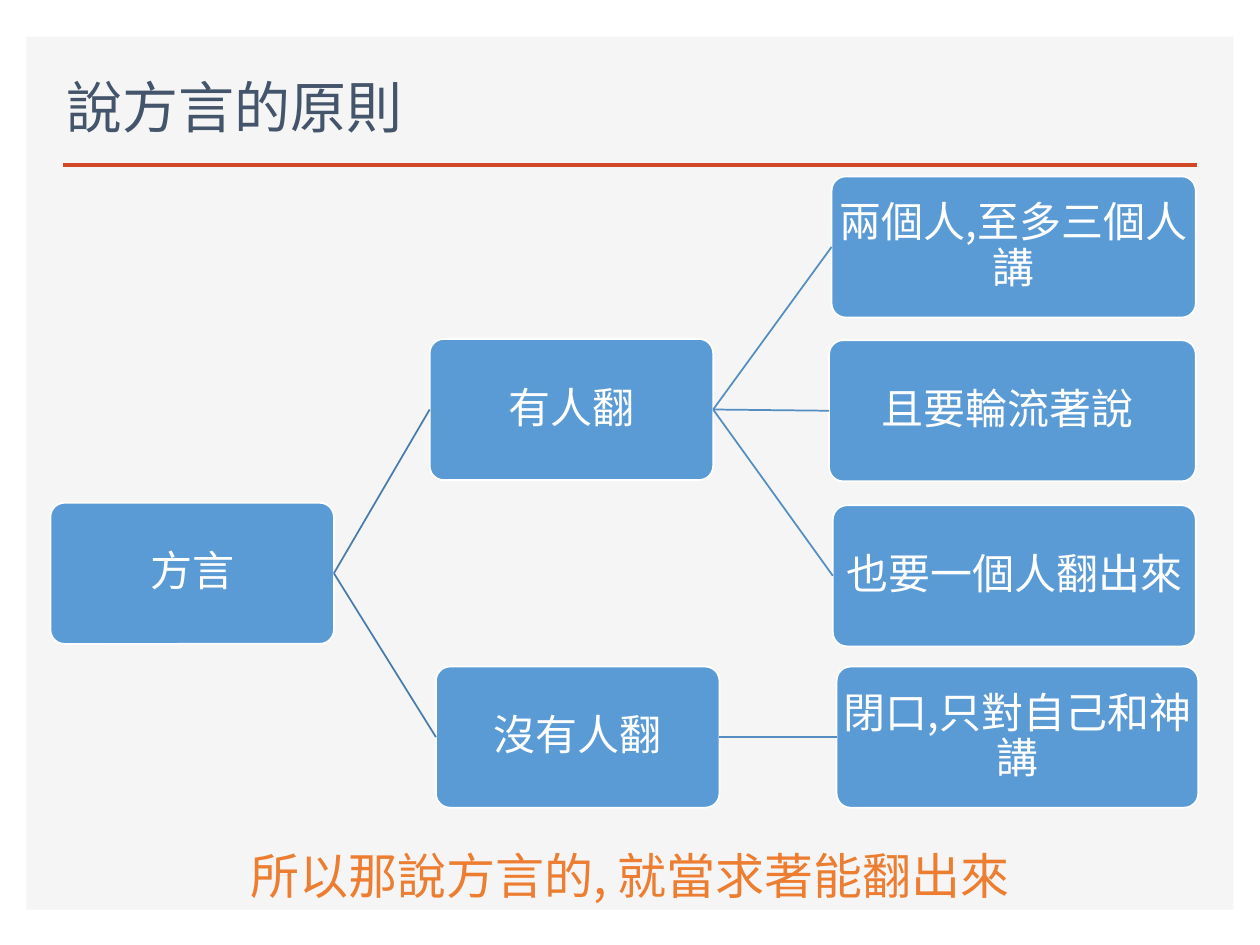
from lxml import etree
from pptx import Presentation
from pptx.dml.color import RGBColor
from pptx.enum.shapes import MSO_CONNECTOR, MSO_SHAPE
from pptx.enum.text import MSO_ANCHOR, PP_ALIGN
from pptx.oxml.ns import qn
from pptx.util import Inches, Pt

RECT, ROUNDED = MSO_SHAPE.RECTANGLE, MSO_SHAPE.ROUNDED_RECTANGLE
STRAIGHT = MSO_CONNECTOR.STRAIGHT
MIDDLE = MSO_ANCHOR.MIDDLE
LEFT, CENTER = PP_ALIGN.LEFT, PP_ALIGN.CENTER

FONT = "Noto Sans CJK SC"
WHITE = RGBColor(0xFF, 0xFF, 0xFF)
PANEL = RGBColor(0xF5, 0xF5, 0xF5)
RED = RGBColor(0xD2, 0x47, 0x26)
SLATE = RGBColor(0x44, 0x54, 0x6A)
BLUE = RGBColor(0x5B, 0x9B, 0xD5)
ORANGE = RGBColor(0xED, 0x7D, 0x31)
# Link colour for each level of the tree
LINK_COLORS = [RGBColor(0x49, 0x7C, 0xAB), RGBColor(0x53, 0x8D, 0xC1)]

NODE_HEIGHT = 1.12
LEFT_SITE, RIGHT_SITE = 1, 3

# (text, left, top, width, children), in inches
TREE = ("方言", 0.4, 3.99, 2.25, [
    ("有人翻", 3.41, 2.69, 2.25, [
        ("兩個人,至多三個人講", 6.6, 1.4, 2.89, []),
        ("且要輪流著說 ", 6.58, 2.7, 2.91, []),
        ("也要一個人翻出來", 6.61, 4.01, 2.88, []),
    ]),
    ("沒有人翻", 3.46, 5.29, 2.25, [
        ("閉口,只對自己和神講", 6.64, 5.29, 2.87, []),
    ]),
])


def write(tf, text, size, color, align):
    tf.word_wrap = True
    p = tf.paragraphs[0]
    p.alignment = align
    r = p.add_run()
    r.text = text
    r.font.size = Pt(size)
    r.font.name = FONT
    r.font.color.rgb = color
    etree.SubElement(r.font._element, qn("a:ea")).set("typeface", FONT)
    return p


def style_line(connector, color, width):
    connector.line.color.rgb = color
    connector.line.width = Pt(width)
    etree.SubElement(connector._element.spPr, qn("a:effectLst"))


def add_backdrop(slide, left, top, width, height):
    """Grey panel with the red rule below the title."""
    panel = slide.shapes.add_shape(RECT, left, top, width, height)
    panel.shadow.inherit = False
    panel.fill.solid()
    panel.fill.fore_color.rgb = PANEL
    panel.line.fill.background()
    margin, rule_y = Inches(0.29), top + Inches(1.02)
    rule = slide.shapes.add_connector(
        STRAIGHT, left + margin, rule_y, left + width - margin, rule_y)
    style_line(rule, RED, 2)


def add_title(slide, left, top, width, height):
    title = slide.shapes.title
    title.left, title.top, title.width, title.height = left, top, width, height
    tf = title.text_frame
    tf.vertical_anchor = MIDDLE
    write(tf, "說方言的原則", 32, SLATE, LEFT)


def add_node(slide, text, left, top, width, height):
    node = slide.shapes.add_shape(ROUNDED, left, top, width, height)
    node.adjustments[0] = 0.1
    node.shadow.inherit = False
    node.fill.solid()
    node.fill.fore_color.rgb = BLUE
    node.line.color.rgb = WHITE
    node.line.width = Pt(1)
    tf = node.text_frame
    tf.vertical_anchor = MIDDLE
    tf.margin_left = tf.margin_right = Inches(0.02)
    tf.margin_top = tf.margin_bottom = Inches(0.02)
    write(tf, text, 24, WHITE, CENTER).line_spacing = 0.9
    return node


def add_tree(slide, branch, level=0):
    """Draw a node and its children, linked from right edge to left edge."""
    text, left, top, width, children = branch
    node = add_node(slide, text, Inches(left), Inches(top),
                    Inches(width), Inches(NODE_HEIGHT))
    for child in children:
        child_node = add_tree(slide, child, level + 1)
        link = slide.shapes.add_connector(STRAIGHT, 0, 0, 0, 0)
        link.begin_connect(node, RIGHT_SITE)
        link.end_connect(child_node, LEFT_SITE)
        style_line(link, LINK_COLORS[level], 1)
    return node


def add_conclusion(slide, left, top, width, height):
    box = slide.shapes.add_textbox(left, top, width, height)
    write(box.text_frame, "所以那說方言的, 就當求著能翻出來", 28, ORANGE, CENTER)


def main():
    prs = Presentation()
    prs.slide_width, prs.slide_height = Inches(10), Inches(7.5)
    title_only = prs.slide_layouts[5]
    slide = prs.slides.add_slide(title_only)
    add_backdrop(slide, Inches(0.21), Inches(0.29), Inches(9.58), Inches(6.93))
    # Bring the title in front of the panel
    slide.shapes._spTree.append(slide.shapes.title._element)
    add_title(slide, Inches(0.43), Inches(0.49), Inches(5.64), Inches(0.7))
    add_tree(slide, TREE)
    add_conclusion(slide, Inches(0.48), Inches(6.66), Inches(9.04), Inches(0.57))
    prs.save("out.pptx")


if __name__ == "__main__":
    main()
